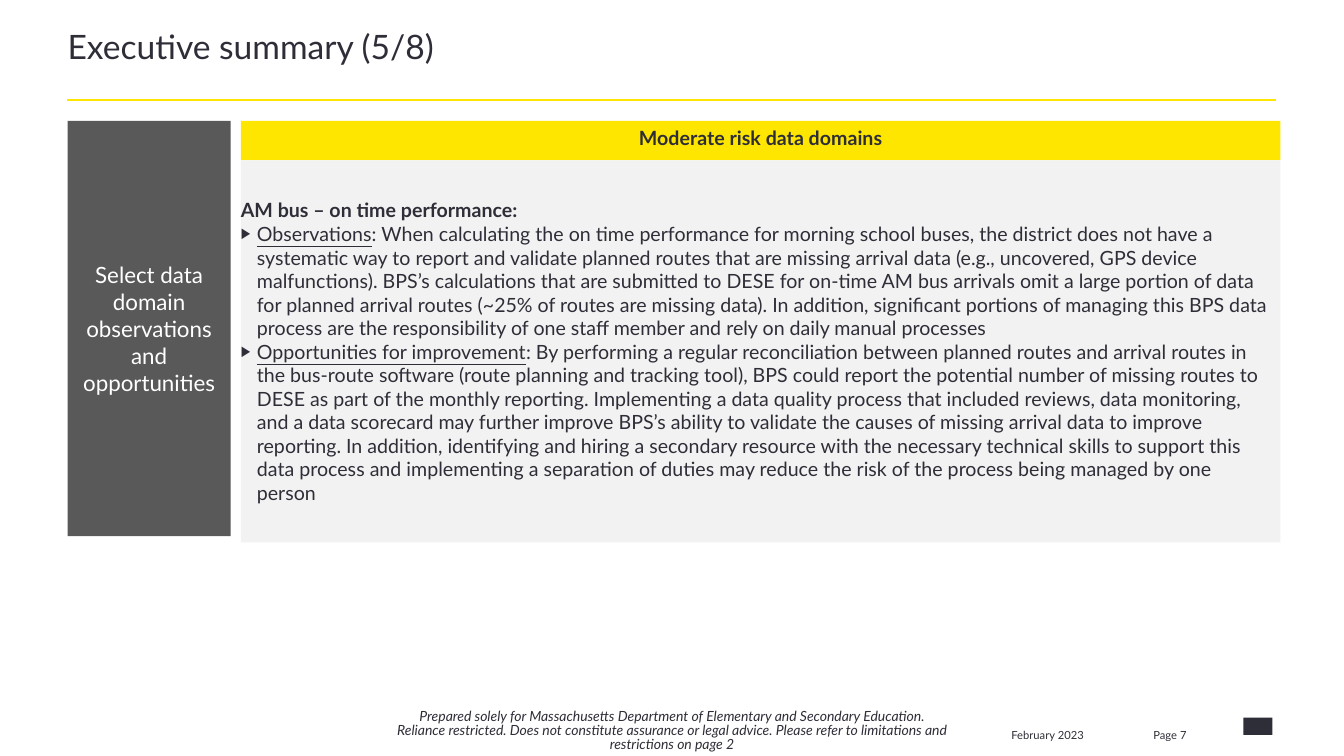
from lxml import etree
from pptx import Presentation
from pptx.dml.color import RGBColor
from pptx.enum import shapes, text
from pptx.oxml import ns
from pptx.util import Inches, Pt

COLORS = {"ink": "2E2E38", "yellow": "FFE600", "gray": "595959", "pale": "F2F2F2", "white": "FFFFFF"}
CENTER = text.PP_ALIGN.CENTER
TOP = text.MSO_ANCHOR.TOP
MIDDLE = text.MSO_ANCHOR.MIDDLE


def write(shape, paragraphs, size, color="ink", bold=False, italic=False, align=text.PP_ALIGN.LEFT,
          anchor=TOP, insets=(0.1, 0.05, 0.1, 0.05), spacing=None):
    frame = shape.text_frame
    frame.word_wrap = True
    frame.auto_size = text.MSO_AUTO_SIZE.NONE
    frame.vertical_anchor = anchor
    frame.margin_left, frame.margin_top, frame.margin_right, frame.margin_bottom = map(Inches, insets)
    for index, (lead, body) in enumerate(paragraphs):
        paragraph = frame.add_paragraph() if index else frame.paragraphs[0]
        paragraph.alignment = align
        paragraph.line_spacing = spacing
        if lead:
            properties = paragraph._p.get_or_add_pPr()
            properties.set("marL", str(Inches(0.16)))
            properties.set("indent", str(Inches(-0.16)))
            for tag, name, value in (("a:buSzPct", "val", "75000"), ("a:buFont", "typeface", "Arial"),
                                     ("a:buChar", "char", "▶")):
                etree.SubElement(properties, ns.qn(tag)).set(name, value)
        for content, underline in ((lead, True), (body, False)):
            if not content:
                continue
            run = paragraph.add_run()
            run.text = content
            font = run.font
            font.name, font.size = "Lato", Pt(size)
            font.bold = bold and not lead
            font.italic, font.underline = italic, underline
            font.color.rgb = RGBColor.from_string(COLORS[color])


def add_block(left, top, width, height, fill):
    shape = slide.shapes.add_shape(shapes.MSO_SHAPE.RECTANGLE, *map(Inches, (left, top, width, height)))
    shape.shadow.inherit = False
    shape.fill.solid()
    shape.fill.fore_color.rgb = RGBColor.from_string(COLORS[fill])
    shape.line.fill.background()
    return shape


presentation = Presentation()
presentation.slide_width = Inches(13.34)
presentation.slide_height = Inches(7.5)
slide = presentation.slides.add_slide(presentation.slide_layouts[5])

title = slide.shapes.title
title.left, title.top, title.width, title.height = map(Inches, (0.67, 0.32, 12.01, 0.65))
write(title, [("", "Executive summary (5/8)")], 24, insets=(0, 0, 0, 0), spacing=0.85)

rule = slide.shapes.add_connector(shapes.MSO_CONNECTOR.STRAIGHT, *map(Inches, (0.67, 0.99, 12.67, 0.99)))
rule.line.color.rgb = RGBColor.from_string(COLORS["yellow"])
rule.line.width = Pt(1.5)
etree.SubElement(rule._element.spPr, ns.qn("a:effectLst"))

sidebar = add_block(0.67, 1.2, 1.62, 4.12, "gray")
write(sidebar, [("", "Select data domain observations and opportunities")], 16, color="white",
      align=CENTER, anchor=MIDDLE)

header = add_block(2.39, 1.2, 10.32, 0.39, "yellow")
write(header, [("", "Moderate risk data domains")], 14, bold=True, align=CENTER)

findings = [
    ("", "AM bus – on time performance:"),
    ("Observations",
     ": When calculating the on time performance for morning school buses, the district does not have a "
     "systematic way to report and validate planned routes that are missing arrival data (e.g., uncovered, "
     "GPS device malfunctions). BPS’s calculations that are submitted to DESE for on-time AM bus arrivals "
     "omit a large portion of data for planned arrival routes (~25% of routes are missing data). In addition, "
     "significant portions of managing this BPS data process are the responsibility of one staff member and "
     "rely on daily manual processes"),
    ("Opportunities for improvement",
     ": By performing a regular reconciliation between planned routes and arrival routes in the bus-route "
     "software (route planning and tracking tool), BPS could report the potential number of missing routes to "
     "DESE as part of the monthly reporting. Implementing a data quality process that included reviews, data "
     "monitoring, and a data scorecard may further improve BPS’s ability to validate the causes of missing "
     "arrival data to improve reporting. In addition, identifying and hiring a secondary resource with the "
     "necessary technical skills to support this data process and implementing a separation of duties may "
     "reduce the risk of the process being managed by one person"),
]
panel = add_block(2.39, 1.59, 10.32, 3.79, "pale")
write(panel, findings, 14, bold=True, anchor=MIDDLE, insets=(0, 0, 0.1, 0))

disclaimer = slide.shapes.add_textbox(*map(Inches, (3.91, 7, 5.52, 0.47)))
write(disclaimer, [("", "Prepared solely for Massachusetts Department of Elementary and Secondary Education. "
                    "Reliance restricted. Does not constitute assurance or legal advice. Please refer to "
                    "limitations and restrictions on page 2")],
      10, italic=True, align=CENTER, insets=(0, 0.04, 0, 0), spacing=0.85)

for left, width, label in ((9.94, 1.3, "February 2023"), (11.35, 0.73, "Page 7")):
    footer = slide.shapes.add_textbox(*map(Inches, (left, 7.18, width, 0.2)))
    write(footer, [("", label)], 8)

add_block(12.34, 7.12, 0.29, 0.17, "ink")

presentation.save("out.pptx")
